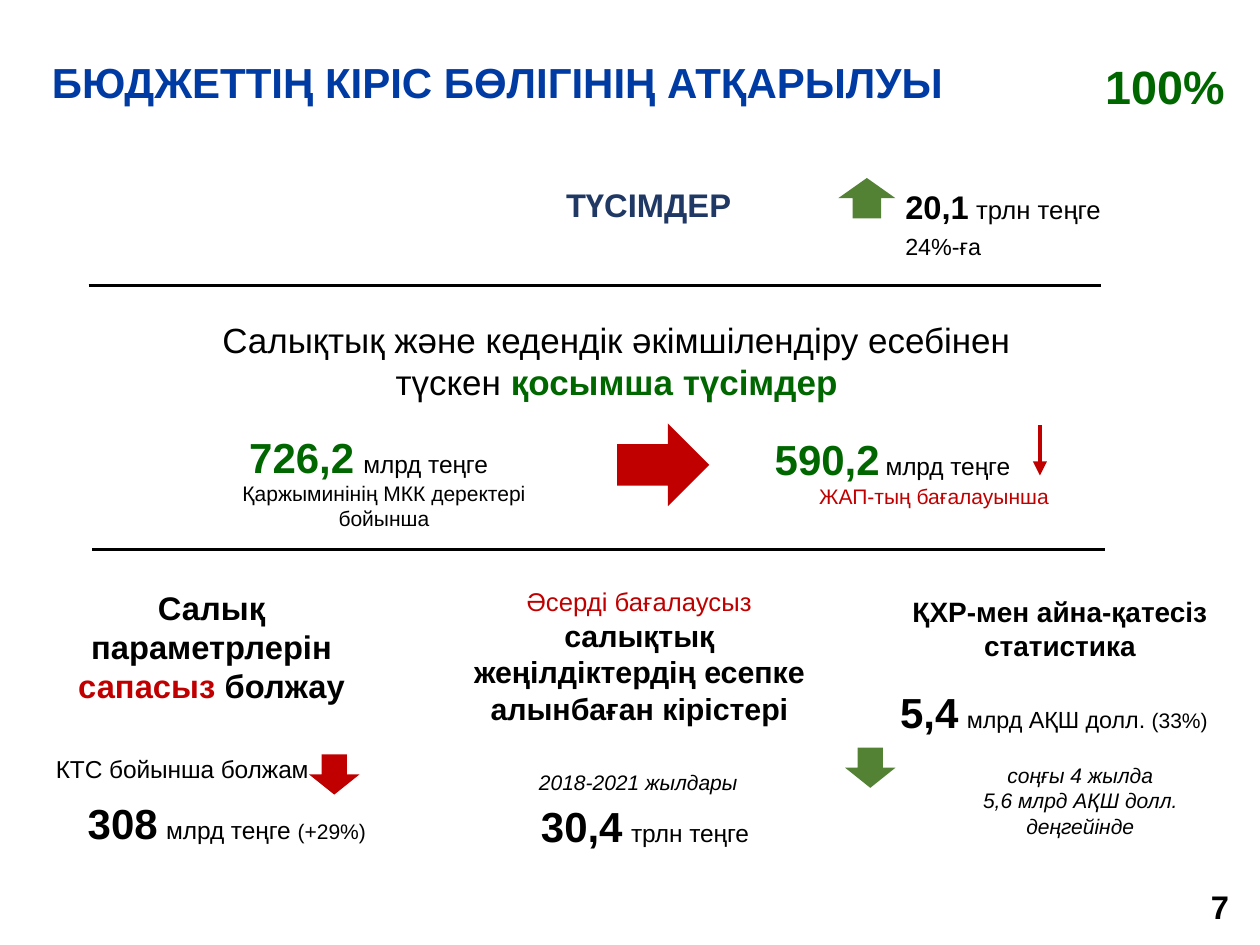
from dataclasses import dataclass

from lxml import etree
from pptx import Presentation
from pptx.dml.color import RGBColor
from pptx.enum.shapes import MSO_CONNECTOR, MSO_SHAPE
from pptx.enum.text import MSO_ANCHOR, PP_ALIGN
from pptx.oxml.ns import qn
from pptx.util import Pt

LEFT, CENTER, JUSTIFY = PP_ALIGN.LEFT, PP_ALIGN.CENTER, PP_ALIGN.JUSTIFY
TOP, MIDDLE = MSO_ANCHOR.TOP, MSO_ANCHOR.MIDDLE
UP_ARROW, DOWN_ARROW = MSO_SHAPE.UP_ARROW, MSO_SHAPE.DOWN_ARROW
RIGHT_ARROW = MSO_SHAPE.RIGHT_ARROW
STRAIGHT = MSO_CONNECTOR.STRAIGHT
TITLE_ONLY = 5
TIGHT, NORMAL = (5, 5), (7.2, 3.6)  # horizontal and vertical text insets


@dataclass(frozen=True)
class Theme:
    font: str = "Arial"
    black: str = "000000"
    blue: str = "003BA3"
    navy: str = "203864"
    green: str = "006600"
    leaf: str = "548235"
    red: str = "C00000"
    percent: float = 20
    figure: float = 18
    lead: float = 15
    heading: float = 14
    topic: float = 13
    subject: float = 12
    label: float = 11
    unit: float = 10.5
    detail: float = 10
    note: float = 9


THEME = Theme()


def run(text, size, color=THEME.black, bold=False, italic=False):
    return text, size, color, bold, italic


def write_text(shape, paragraphs, align=LEFT, insets=NORMAL, anchor=TOP,
               line_spacing=1.0, gap=0):
    """Fill a shape with paragraphs, each given as a list of runs."""
    frame = shape.text_frame
    frame.word_wrap = True
    frame.vertical_anchor = anchor
    frame.margin_left = frame.margin_right = Pt(insets[0])
    frame.margin_top = frame.margin_bottom = Pt(insets[1])
    for index, runs in enumerate(paragraphs):
        paragraph = frame.add_paragraph() if index else frame.paragraphs[0]
        paragraph.alignment = align
        paragraph.line_spacing = line_spacing
        paragraph.space_before = Pt(0)
        paragraph.space_after = Pt(gap)
        for text, size, color, bold, italic in runs:
            piece = paragraph.add_run()
            piece.text = text
            piece.font.name = THEME.font
            piece.font.size = Pt(size)
            piece.font.bold = bold
            piece.font.italic = italic
            piece.font.color.rgb = RGBColor.from_string(color)


def add_text(slide, box, *paragraphs, **layout):
    shape = slide.shapes.add_textbox(*map(Pt, box))
    write_text(shape, paragraphs, **layout)


def add_title(slide, box, text):
    title = slide.shapes.title
    title.left, title.top, title.width, title.height = map(Pt, box)
    write_text(title, [[run(text, THEME.figure, THEME.blue, True)]],
               insets=TIGHT, line_spacing=0.9)


def add_block_arrow(slide, kind, box, color):
    arrow = slide.shapes.add_shape(kind, *map(Pt, box))
    arrow.shadow.inherit = False
    arrow.fill.solid()
    arrow.fill.fore_color.rgb = RGBColor.from_string(color)
    arrow.line.fill.background()


def add_line(slide, start, end, color, width, arrowhead=False):
    line = slide.shapes.add_connector(STRAIGHT, *map(Pt, start + end))
    line.line.color.rgb = RGBColor.from_string(color)
    line.line.width = Pt(width)
    properties = line.element.spPr
    if arrowhead:
        outline = properties.find(qn("a:ln"))
        etree.SubElement(outline, qn("a:tailEnd"), type="triangle")
    etree.SubElement(properties, qn("a:effectLst"))


def add_receipts(slide):
    add_text(slide, (237.6, 76.3, 120, 24.5),
             [run("ТҮСІМДЕР", THEME.heading, THEME.navy, True)],
             insets=TIGHT, align=JUSTIFY, line_spacing=0.9)
    add_block_arrow(slide, UP_ARROW, (359.3, 76.3, 24.5, 17.3), THEME.leaf)
    add_text(slide, (383, 75, 134, 42.5),
             [run("20,1", THEME.heading, bold=True),
              run(" трлн теңге", THEME.label)],
             [run("24%-ға", THEME.detail)],
             insets=TIGHT, align=JUSTIFY, gap=2.5)


def add_extra_receipts(slide):
    add_text(slide, (82.8, 133.2, 363, 44),
             [run("Салықтық және кедендік әкімшілендіру есебінен түскен ",
                  THEME.lead),
              run("қосымша түсімдер", THEME.lead, THEME.green, True)],
             align=CENTER)
    add_text(slide, (80, 180, 156, 30),
             [run("726,2", THEME.figure, THEME.green, True),
              run(" ", THEME.heading, bold=True),
              run("млрд теңге", THEME.unit)],
             insets=TIGHT, align=CENTER)
    add_text(slide, (86.5, 201, 156, 32),
             [run("Қаржыминінің МКК деректері бойынша", THEME.note)],
             insets=TIGHT, align=CENTER)
    add_block_arrow(slide, RIGHT_ARROW, (264.5, 181.5, 39.5, 35.5), THEME.red)
    add_text(slide, (327, 180.7, 131, 30),
             [run("590,2", THEME.figure, THEME.green, True),
              run(" ", THEME.note, italic=True),
              run("млрд теңге", THEME.unit)],
             insets=TIGHT, align=JUSTIFY)
    add_text(slide, (344, 203.8, 114, 18),
             [run("ЖАП-тың бағалауынша", THEME.note, THEME.red)])
    add_line(slide, (445.7, 182.2), (445.7, 203.8), THEME.red, 2, True)


def add_tax_forecast(slide):
    add_text(slide, (8.6, 248.4, 164.2, 58),
             [run("Салық параметрлерін ", THEME.heading, bold=True),
              run("сапасыз ", THEME.heading, THEME.red, True),
              run("болжау", THEME.heading, bold=True)],
             align=CENTER)
    add_text(slide, (18.9, 318.2, 134, 24.5),
             [run("КТС бойынша болжам", THEME.unit)],
             insets=TIGHT, align=JUSTIFY)
    add_block_arrow(slide, DOWN_ARROW, (132.5, 323.3, 21.6, 17.3), THEME.red)
    add_text(slide, (32.6, 339.1, 157, 24.5),
             [run("308", THEME.figure, bold=True),
              run(" ", THEME.topic, bold=True),
              run("млрд теңге ", THEME.unit),
              run("(+29%)", THEME.note)],
             insets=TIGHT, align=JUSTIFY, line_spacing=0.9)


def add_tax_reliefs(slide):
    add_text(slide, (193.7, 246.2, 160.6, 85),
             [run("Әсерді бағалаусыз ", THEME.label, THEME.red),
              run("салықтық жеңілдіктердің есепке алынбаған кірістері",
                  THEME.topic, bold=True)],
             insets=TIGHT, align=CENTER)
    add_text(slide, (223.9, 326.2, 139, 18),
             [run("2018-2021 жылдары", THEME.note, italic=True)])
    add_text(slide, (216.7, 340.6, 119.5, 42.5),
             [run("30,4", THEME.figure, bold=True),
              run(" ", THEME.topic, bold=True),
              run("трлн теңге", THEME.unit)],
             insets=TIGHT, align=CENTER, line_spacing=0.9)


def add_mirror_statistics(slide):
    add_text(slide, (382.3, 249.8, 144, 49),
             [run("ҚХР-мен айна-қатесіз статистика", THEME.subject, bold=True)],
             insets=TIGHT, align=CENTER)
    add_text(slide, (378.7, 290.9, 161, 29),
             [run("5,4", THEME.figure, bold=True),
              run(" ", THEME.topic),
              run("млрд АҚШ долл. ", THEME.detail),
              run("(33%)", THEME.note)])
    add_block_arrow(slide, DOWN_ARROW, (362.2, 320.4, 21.6, 17.3), THEME.leaf)
    add_text(slide, (403.2, 323.3, 119.5, 40),
             [run("соңғы 4 жылда", THEME.note, italic=True)],
             [run("5,6 млрд АҚШ долл. деңгейінде", THEME.note, italic=True)],
             align=CENTER)


def main():
    presentation = Presentation()
    presentation.slide_width, presentation.slide_height = Pt(540), Pt(405)
    layout = presentation.slide_layouts[TITLE_ONLY]
    slide = presentation.slides.add_slide(layout)

    add_title(slide, (17.3, 21.6, 428.4, 27.4),
              "БЮДЖЕТТІҢ КІРІС БӨЛІГІНІҢ АТҚАРЫЛУЫ")
    add_text(slide, (468.7, 27.4, 67.7, 18.7),
             [run("100%", THEME.percent, THEME.green, True)],
             insets=TIGHT, align=JUSTIFY, anchor=MIDDLE)
    add_receipts(slide)
    add_extra_receipts(slide)
    add_tax_forecast(slide)
    add_tax_reliefs(slide)
    add_mirror_statistics(slide)
    for left, top in ((38, 122.4), (39.6, 235.4)):
        add_line(slide, (left, top), (left + 434, top), THEME.black, 1.25)
    add_text(slide, (511.9, 376.6, 24, 24.5),
             [run("7", THEME.heading, bold=True)])

    presentation.save("out.pptx")


if __name__ == "__main__":
    main()
